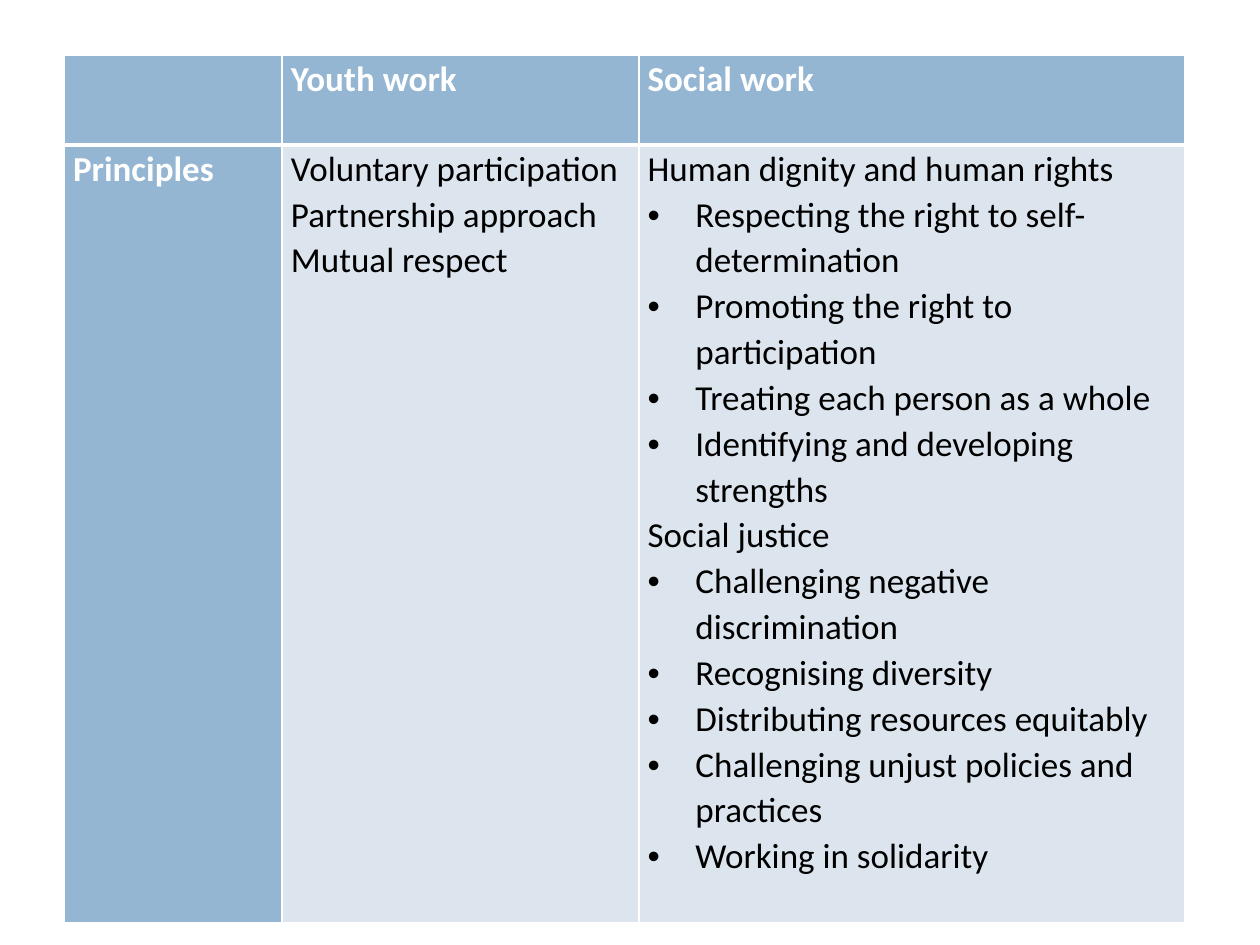
import pptx
import pptx.dml.color
import pptx.oxml
import pptx.oxml.ns
import pptx.util
from pptx.util import Inches, Pt

# Content: each cell is a list of lines; a leading "• " marks a bullet
ROWS = [
    [[], ["Youth work"], ["Social work"]],
    [
        ["Principles"],
        ["Voluntary participation", "Partnership approach", "Mutual respect"],
        [
            "Human dignity and human rights",
            "• Respecting the right to self-determination",
            "• Promoting the right to participation",
            "• Treating each person as a whole",
            "• Identifying and developing strengths",
            "Social justice",
            "• Challenging negative discrimination",
            "• Recognising diversity",
            "• Distributing resources equitably",
            "• Challenging unjust policies and practices",
            "• Working in solidarity",
        ],
    ],
]
COLUMN_WIDTHS = [1.73, 2.83, 4.33]
ROW_HEIGHTS = [0.71, 6.17]
LEFT, TOP = 0.51, 0.44
BULLET = "• "
HEADING_FILL, BODY_FILL = "94B6D2", "DCE5EE"
WHITE, BLACK = "FFFFFF", "000000"


def color(hex_string):
    return pptx.dml.color.RGBColor.from_string(hex_string)


def add_borders(cell, widths):
    """Put white lines before the fill, in left, right, top, bottom order."""
    properties = cell._tc.get_or_add_tcPr()
    for place, (side, width) in enumerate(zip("LRTB", widths)):
        properties.insert(place, pptx.oxml.parse_xml(
            f'<a:ln{side} {pptx.oxml.ns.nsdecls("a")} w="{Pt(width)}">'
            f'<a:solidFill><a:srgbClr val="{WHITE}"/></a:solidFill></a:ln{side}>'))


def add_bullet(paragraph):
    properties = paragraph._p.get_or_add_pPr()
    properties.set("marL", str(Inches(0.38)))
    properties.set("indent", str(Inches(-0.38)))
    for xml in ('<a:buFont {} typeface="Arial"/>', '<a:buChar {} char="•"/>'):
        properties.append(pptx.oxml.parse_xml(xml.format(pptx.oxml.ns.nsdecls("a"))))


def fill_cell(cell, lines, is_heading):
    cell.fill.solid()
    cell.fill.fore_color.rgb = color(HEADING_FILL if is_heading else BODY_FILL)
    cell.margin_left = cell.margin_right = Inches(0.07)
    cell.margin_top = cell.margin_bottom = 0
    cell.text_frame.text = "\n".join(line.removeprefix(BULLET) for line in lines)
    for paragraph, line in zip(cell.text_frame.paragraphs, lines):
        paragraph.line_spacing = 1.07
        if line.startswith(BULLET):
            add_bullet(paragraph)
        for run in paragraph.runs:
            run.font.name = "Calibri"
            run.font.size = Pt(20)
            run.font.bold = is_heading
            run.font.color.rgb = color(WHITE if is_heading else BLACK)


presentation = pptx.Presentation()
presentation.slide_width, presentation.slide_height = Inches(10), Inches(7.5)
slide = presentation.slides.add_slide(presentation.slide_layouts[6])

# Comparison table
comparison = slide.shapes.add_table(
    len(ROWS), len(COLUMN_WIDTHS), Inches(LEFT), Inches(TOP),
    Inches(sum(COLUMN_WIDTHS)), Inches(sum(ROW_HEIGHTS))).table
comparison.first_col = True
for column, width in zip(comparison.columns, COLUMN_WIDTHS):
    column.width = Inches(width)
for row, height in zip(comparison.rows, ROW_HEIGHTS):
    row.height = Inches(height)

# Headings fill the first row and first column; a thick line parts the rows
for r, row in enumerate(ROWS):
    for c, lines in enumerate(row):
        cell = comparison.cell(r, c)
        fill_cell(cell, lines, is_heading=r == 0 or c == 0)
        add_borders(cell, (1, 1, 1, 3) if r == 0 else (1, 1, 3, 1))

presentation.save("out.pptx")
